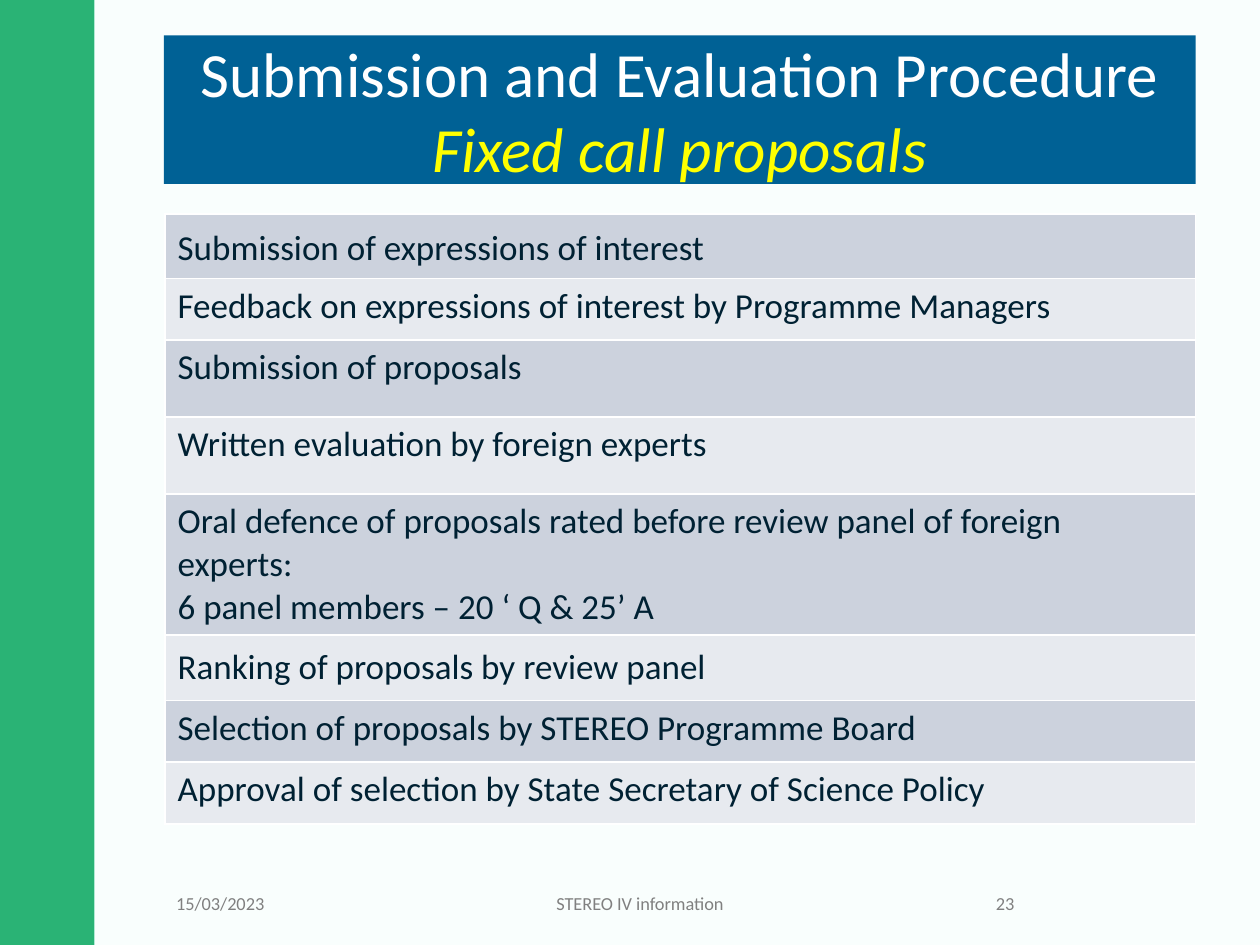
import dataclasses

import lxml.etree
import pptx
import pptx.dml.color
import pptx.enum.shapes
import pptx.enum.text
import pptx.oxml.ns
import pptx.util

Inches = pptx.util.Inches
Align = pptx.enum.text.PP_ALIGN
Anchor = pptx.enum.text.MSO_ANCHOR
qn = pptx.oxml.ns.qn


@dataclasses.dataclass(frozen=True)
class Theme:
    font: str = "Calibri"
    background: str = "CAFBED"
    side_band: str = "03A158"
    white: str = "FFFFFF"
    title_fill: str = "006195"
    subtitle: str = "FFFF00"
    footer: str = "808080"
    table_text: str = "002133"
    row_fills: tuple[str, str] = ("CCD2DD", "E7EAEF")
    title_size: float = 36
    table_size: float = 20
    footer_size: float = 10.5


@dataclasses.dataclass(frozen=True)
class Panel:
    left: float
    width: float
    color: str
    opacity: int


@dataclasses.dataclass(frozen=True)
class Step:
    text: str
    height: float
    anchor: Anchor = Anchor.TOP
    line_spacing: float = 1.0


@dataclasses.dataclass(frozen=True)
class FooterItem:
    text: str
    left: float
    width: float
    alignment: Align


THEME = Theme()
PANELS = (
    Panel(0, 0.75, THEME.side_band, 80),
    Panel(0.75, 9.25, THEME.white, 90),
)
STEPS = (
    Step("Submission of expressions of interest", 0.51, line_spacing=1.15),
    Step("Feedback on expressions of interest by Programme Managers", 0.49),
    Step("Submission of proposals", 0.61),
    Step("Written evaluation by foreign experts", 0.61),
    Step("Oral defence of proposals rated before review panel of foreign experts:\n"
         "6 panel members – 20 ‘ Q & 25’ A", 1.12, Anchor.MIDDLE),
    Step("Ranking of proposals by review panel", 0.52, Anchor.MIDDLE),
    Step("Selection of proposals by STEREO Programme Board", 0.49),
    Step("Approval of selection by State Secretary of Science Policy", 0.49),
)
FOOTER = (
    FooterItem("15/03/2023", 1.3, 1.18, Align.LEFT),
    FooterItem("STEREO IV information", 2.56, 5.04, Align.CENTER),
    FooterItem("23", 7.68, 0.47, Align.RIGHT),
)


def rgb(color: str) -> pptx.dml.color.RGBColor:
    return pptx.dml.color.RGBColor.from_string(color)


def style_font(font, size: float, color: str) -> None:
    font.name = THEME.font
    font.size = pptx.util.Pt(size)
    font.color.rgb = rgb(color)


def add_rectangle(slide, left: float, top: float, width: float, height: float, color: str):
    shape = slide.shapes.add_shape(
        pptx.enum.shapes.MSO_SHAPE.RECTANGLE,
        Inches(left), Inches(top), Inches(width), Inches(height))
    shape.shadow.inherit = False
    shape.fill.solid()
    shape.fill.fore_color.rgb = rgb(color)
    shape.line.fill.background()
    return shape


def add_panel(slide, panel: Panel) -> None:
    shape = add_rectangle(slide, panel.left, 0, panel.width, 7.5, panel.color)
    color = shape.fill._xPr.find(".//" + qn("a:srgbClr"))
    lxml.etree.SubElement(color, qn("a:alpha"), val=str(panel.opacity * 1000))


def add_title(slide) -> None:
    shape = add_rectangle(slide, 1.3, 0.28, 8.19, 1.18, THEME.title_fill)
    frame = shape.text_frame
    frame.word_wrap = True
    frame.vertical_anchor = Anchor.MIDDLE
    frame.margin_top = frame.margin_bottom = 0
    paragraph = frame.paragraphs[0]
    paragraph.text = "Submission and Evaluation Procedure\vFixed call proposals"
    paragraph.alignment = Align.CENTER
    heading, subtitle = paragraph.runs
    style_font(heading.font, THEME.title_size, THEME.white)
    style_font(subtitle.font, THEME.title_size, THEME.subtitle)
    subtitle.font.italic = True


def add_cell_borders(cell) -> None:
    """Draw a thin white line on all four sides, ahead of the cell fill."""
    properties = cell._tc.get_or_add_tcPr()
    for index, side in enumerate(("lnL", "lnR", "lnT", "lnB")):
        line = lxml.etree.Element(qn(f"a:{side}"), w=str(pptx.util.Pt(1)))
        fill = lxml.etree.SubElement(line, qn("a:solidFill"))
        lxml.etree.SubElement(fill, qn("a:srgbClr"), val=THEME.white)
        properties.insert(index, line)


def add_steps_table(slide, steps: tuple[Step, ...]) -> None:
    total = sum(step.height for step in steps)
    table = slide.shapes.add_table(
        len(steps), 1, Inches(1.31), Inches(1.7), Inches(8.18), Inches(total)).table
    table.first_row = False
    table.horz_banding = False
    for index, step in enumerate(steps):
        table.rows[index].height = Inches(step.height)
        cell = table.cell(index, 0)
        cell.fill.solid()
        cell.fill.fore_color.rgb = rgb(THEME.row_fills[index % 2])
        add_cell_borders(cell)
        cell.vertical_anchor = step.anchor
        cell.text_frame.text = step.text
        for paragraph in cell.text_frame.paragraphs:
            paragraph.line_spacing = step.line_spacing
            for run in paragraph.runs:
                style_font(run.font, THEME.table_size, THEME.table_text)


def add_footer_item(slide, item: FooterItem) -> None:
    shape = slide.shapes.add_textbox(
        Inches(item.left), Inches(6.97), Inches(item.width), Inches(0.4))
    frame = shape.text_frame
    frame.word_wrap = True
    frame.vertical_anchor = Anchor.MIDDLE
    frame.text = item.text
    paragraph = frame.paragraphs[0]
    paragraph.alignment = item.alignment
    style_font(paragraph.runs[0].font, THEME.footer_size, THEME.footer)


def main() -> None:
    presentation = pptx.Presentation()
    presentation.slide_width = Inches(10)
    presentation.slide_height = Inches(7.5)
    slide = presentation.slides.add_slide(presentation.slide_layouts[6])
    slide.background.fill.solid()
    slide.background.fill.fore_color.rgb = rgb(THEME.background)
    for panel in PANELS:
        add_panel(slide, panel)
    add_title(slide)
    for item in FOOTER:
        add_footer_item(slide, item)
    add_steps_table(slide, STEPS)
    presentation.save("out.pptx")


if __name__ == "__main__":
    main()
